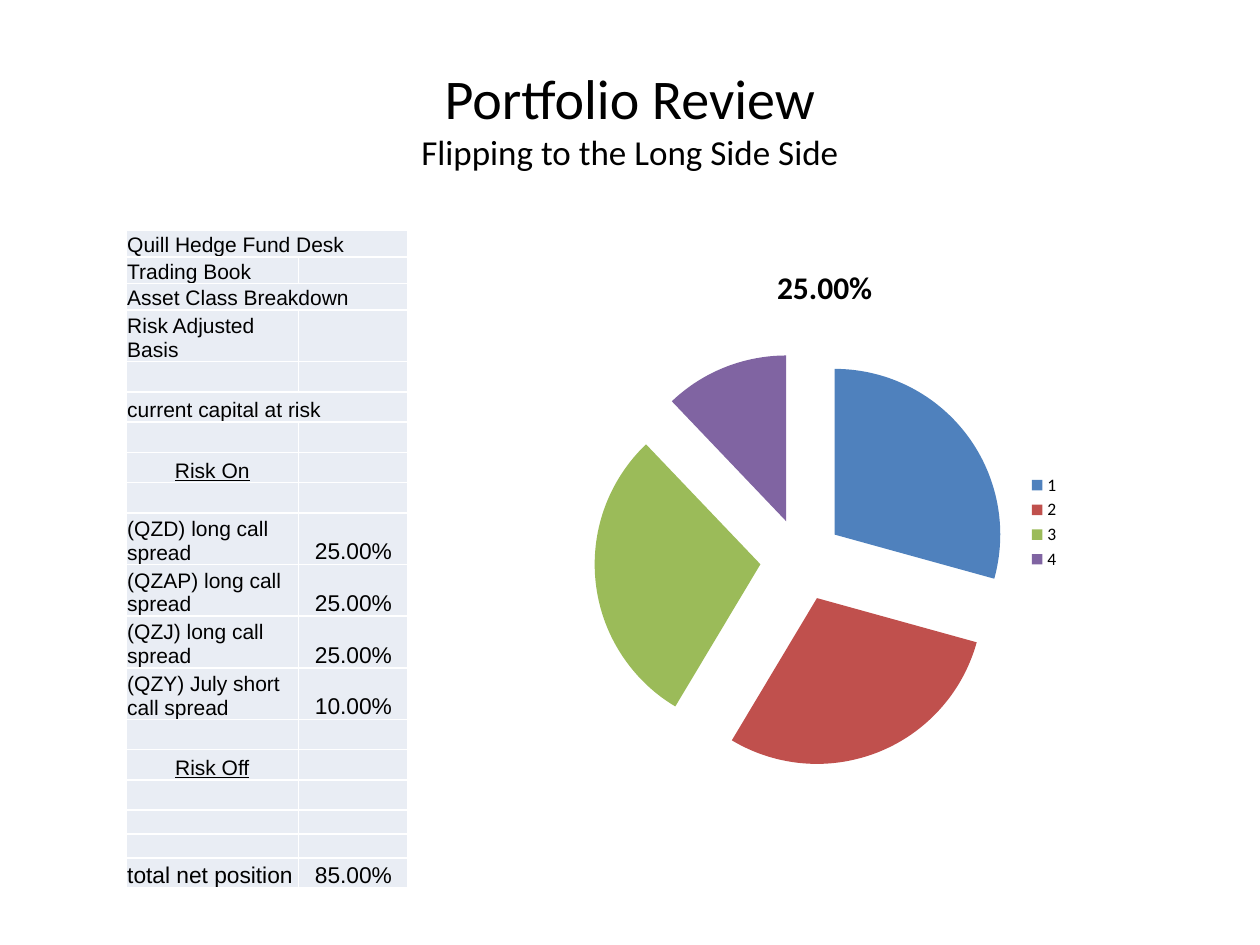
from lxml import etree
from pptx import Presentation
from pptx.chart.data import CategoryChartData
from pptx.dml.color import RGBColor
from pptx.enum.chart import XL_CHART_TYPE, XL_LEGEND_POSITION
from pptx.enum.text import MSO_ANCHOR, PP_ALIGN
from pptx.oxml import parse_xml
from pptx.oxml.ns import nsdecls, qn
from pptx.util import Inches, Pt

BLACK = RGBColor(0x00, 0x00, 0x00)
CELL_FILL = RGBColor(0xE9, 0xED, 0xF4)
SLICE_COLORS = [RGBColor(0x4F, 0x81, 0xBD), RGBColor(0xC0, 0x50, 0x4D),
                RGBColor(0x9B, 0xBB, 0x59), RGBColor(0x80, 0x64, 0xA2)]

COLUMN_WIDTHS = [1.37, 0.87]
# Row height, label, value
BOOK_ROWS = [
    (0.21, "Quill Hedge Fund Desk", ""),
    (0.21, "Trading Book", ""),
    (0.21, "Asset Class Breakdown", ""),
    (0.21, "Risk Adjusted Basis", ""),
    (0.24, "", ""),
    (0.24, "current capital at risk", ""),
    (0.24, "", ""),
    (0.24, "Risk On", ""),
    (0.24, "", ""),
    (0.40, "(QZD) long call spread", "25.00%"),
    (0.40, "(QZAP) long call spread", "25.00%"),
    (0.40, "(QZJ) long call spread", "25.00%"),
    (0.40, "(QZY) July short call spread", "10.00%"),
    (0.24, "", ""),
    (0.24, "Risk Off", ""),
    (0.24, "", ""),
    (0.19, "", ""),
    (0.19, "", ""),
    (0.24, "total net position", "85.00%"),
]
FULL_WIDTH_ROWS = (0, 2, 5)
SECTION_HEADINGS = ("Risk On", "Risk Off")
SLICES = [29, 29, 29, 12]
CATEGORY_COUNT = 9


def style_font(font, name, size):
    font.name = name
    font.size = Pt(size)
    font.color.rgb = BLACK


def add_heading(slide):
    heading = slide.shapes.add_textbox(Inches(0.5), Inches(0.25),
                                       Inches(9), Inches(1.67)).text_frame
    heading.word_wrap = True
    heading.vertical_anchor = MSO_ANCHOR.MIDDLE
    heading.margin_bottom = Inches(0.35)
    lines = [("Portfolio Review", 32), ("Flipping to the Long Side Side", 20)]
    heading.text = "\n".join(text for text, _ in lines)
    for paragraph, (_, size) in zip(heading.paragraphs, lines):
        paragraph.alignment = PP_ALIGN.CENTER
        style_font(paragraph.font, "Calibri", size)


def add_allocation_pie(slide):
    data = CategoryChartData()
    data.categories = [str(n + 1) for n in range(CATEGORY_COUNT)]
    data.add_series("25.00%", SLICES + [None] * (CATEGORY_COUNT - len(SLICES)))
    pie = slide.shapes.add_chart(XL_CHART_TYPE.PIE, Inches(4.58), Inches(1.92),
                                 Inches(3.93), Inches(4.45), data).chart
    style_font(pie.font, "Calibri", 10)

    pie.has_title = True
    title = pie.chart_title.text_frame.paragraphs[0]
    title.text = "25.00%"
    style_font(title.font, "Calibri", 18)
    title.font.bold = True

    # Slices, pulled apart
    plot = pie.plots[0]
    plot.vary_by_categories = True
    series = plot.series[0]
    for index, color in enumerate(SLICE_COLORS):
        fill = series.points[index].format.fill
        fill.solid()
        fill.fore_color.rgb = color
    explosion = etree.Element(qn("c:explosion"), val="25")
    series._element.find(qn("c:dPt")).addprevious(explosion)

    # Legend lists only the categories that hold a value
    pie.has_legend = True
    pie.legend.position = XL_LEGEND_POSITION.RIGHT
    pie.legend.include_in_layout = False
    style_font(pie.legend.font, "Calibri", 10)
    last = pie.legend._element.find(qn("c:legendPos"))
    for index in range(len(SLICES), CATEGORY_COUNT):
        entry = parse_xml(f'<c:legendEntry {nsdecls("c")}><c:idx val="{index}"/>'
                          '<c:delete val="1"/></c:legendEntry>')
        last.addnext(entry)
        last = entry


def add_borders(cell):
    properties = cell._tc.get_or_add_tcPr()
    for position, side in enumerate(("lnL", "lnR", "lnT", "lnB")):
        properties.insert(position, parse_xml(
            f'<a:{side} {nsdecls("a")} w="12700"><a:solidFill>'
            f'<a:srgbClr val="FFFFFF"/></a:solidFill></a:{side}>'))


def fill_cell(cell, text, size, centered):
    cell.fill.solid()
    cell.fill.fore_color.rgb = CELL_FILL
    add_borders(cell)
    cell.vertical_anchor = MSO_ANCHOR.BOTTOM
    cell.margin_left = cell.margin_right = cell.margin_top = Inches(0.01)
    cell.margin_bottom = 0
    paragraph = cell.text_frame.paragraphs[0]
    if not text:
        # An empty cell takes its line height from the end mark
        etree.SubElement(paragraph._p, qn("a:endParaRPr"), sz="1000")
        return
    paragraph.text = text
    style_font(paragraph.font, "Arial", size)
    paragraph.font.underline = text in SECTION_HEADINGS
    paragraph.alignment = PP_ALIGN.CENTER if centered else PP_ALIGN.LEFT


def add_trading_book(slide):
    heights = [height for height, _, _ in BOOK_ROWS]
    book = slide.shapes.add_table(len(BOOK_ROWS), len(COLUMN_WIDTHS),
                                  Inches(1), Inches(1.83),
                                  Inches(sum(COLUMN_WIDTHS)),
                                  Inches(sum(heights))).table
    book.first_row = book.horz_banding = False
    for column, width in zip(book.columns, COLUMN_WIDTHS):
        column.width = Inches(width)
    for index, (height, label, value) in enumerate(BOOK_ROWS):
        book.rows[index].height = Inches(height)
        label_size = 13 if index == len(BOOK_ROWS) - 1 else 12
        fill_cell(book.cell(index, 0), label, label_size, label in SECTION_HEADINGS)
        fill_cell(book.cell(index, 1), value, 13, True)
        if index in FULL_WIDTH_ROWS:
            book.cell(index, 0).merge(book.cell(index, 1))


def main():
    deck = Presentation()
    deck.slide_width, deck.slide_height = Inches(10), Inches(7.5)
    slide = deck.slides.add_slide(deck.slide_layouts[6])
    add_heading(slide)
    add_allocation_pie(slide)
    add_trading_book(slide)
    deck.save("out.pptx")


if __name__ == "__main__":
    main()
